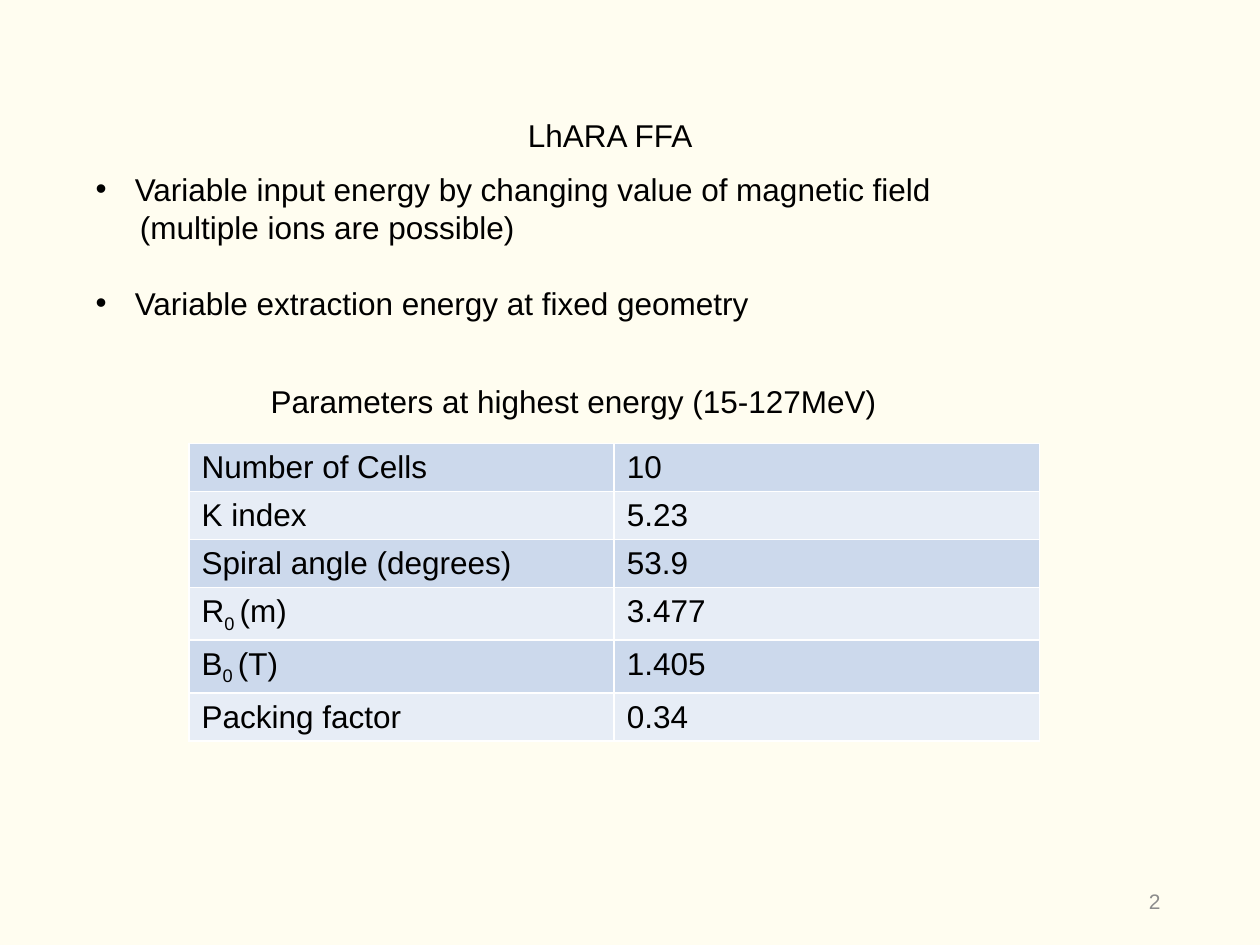
from dataclasses import dataclass

from lxml.etree import SubElement
from pptx import Presentation
from pptx.dml.color import RGBColor
from pptx.enum.text import MSO_ANCHOR, MSO_AUTO_SIZE, PP_ALIGN
from pptx.oxml.ns import qn
from pptx.util import Inches, Pt


@dataclass(frozen=True)
class Theme:
    font: str = "Arial"
    size: Pt = Pt(18)
    small: Pt = Pt(12)
    back: RGBColor = RGBColor(0xFF, 0xFD, 0xF0)
    ink: RGBColor = RGBColor(0, 0, 0)
    gray: RGBColor = RGBColor(0x8C, 0x8C, 0x8C)
    bands: tuple = (RGBColor(0xCC, 0xD9, 0xEC), RGBColor(0xE7, 0xED, 0xF6))
    rule: str = "FFFFFF"


@dataclass(frozen=True)
class Box:
    left: float
    top: float
    width: float
    height: float

    def emu(self) -> tuple:
        return tuple(map(Inches, (self.left, self.top, self.width, self.height)))


@dataclass(frozen=True)
class Item:
    text: str
    indent: float
    bullet: bool = True
    gap: float = 0


@dataclass(frozen=True)
class Row:
    name: str
    value: str
    sub: str = ""
    unit: str = ""


THEME = Theme()
ITEMS = (
    Item("Variable input energy by changing value of magnetic field", 0.31),
    Item("(multiple ions are possible)", 0.35, bullet=False),
    Item("Variable extraction energy at fixed geometry", 0.31, gap=21.7),
)
ROWS = (
    Row("Number of Cells", "10"),
    Row("K index", "5.23"),
    Row("Spiral angle (degrees)", "53.9"),
    Row("R", "3.477", "0 ", "(m)"),
    Row("B", "1.405", "0 ", "(T)"),
    Row("Packing factor", "0.34"),
)


def style(font, **extra) -> None:
    looks = {"name": THEME.font, "size": THEME.size, **extra}
    color = looks.pop("color", THEME.ink)
    for key, value in looks.items():
        setattr(font, key, value)
    font.color.rgb = color


def place(shape, box: Box, anchor=MSO_ANCHOR.TOP):
    """Move a text shape and return its text frame, set to wrap."""
    shape.left, shape.top, shape.width, shape.height = box.emu()
    frame = shape.text_frame
    looks = {"word_wrap": True, "auto_size": MSO_AUTO_SIZE.NONE,
             "vertical_anchor": anchor}
    for key, value in looks.items():
        setattr(frame, key, value)
    return frame


def write(shape, box: Box, text: str, align=PP_ALIGN.LEFT,
          anchor=MSO_ANCHOR.TOP, **looks) -> None:
    para = place(shape, box, anchor).paragraphs[0]
    para.alignment = align
    run = para.add_run()
    run.text = text
    style(run.font, **looks)


def fill_list(shape, box: Box, items: tuple[Item, ...]) -> None:
    frame = place(shape, box)
    for num, item in enumerate(items):
        para = frame.add_paragraph() if num else frame.paragraphs[0]
        para.space_before = Pt(item.gap)
        props = para._p.get_or_add_pPr()
        props.set("marL", str(Inches(item.indent)))
        props.set("indent", str(Inches(-item.indent if item.bullet else 0)))
        if item.bullet:
            SubElement(props, qn("a:buFont"), typeface=THEME.font)
            SubElement(props, qn("a:buChar"), char="•")
        else:
            SubElement(props, qn("a:buNone"))
        run = para.add_run()
        run.text = item.text
        style(run.font)


def fill_cell(cell, parts: tuple, color: RGBColor) -> None:
    """Write the parts, the second one as a subscript, and rule the edges."""
    para = cell.text_frame.paragraphs[0]
    for num, text in enumerate(parts):
        if text:
            run = para.add_run()
            run.text = text
            style(run.font)
            if num == 1:
                run._r.get_or_add_rPr().set("baseline", "-25000")
    props = cell._tc.get_or_add_tcPr()
    for side in ("lnL", "lnR", "lnT", "lnB"):
        line = SubElement(props, qn(f"a:{side}"), w=str(Pt(1)))
        SubElement(SubElement(line, qn("a:solidFill")), qn("a:srgbClr"),
                   val=THEME.rule)
    cell.fill.solid()
    cell.fill.fore_color.rgb = color


def add_grid(slide, box: Box, rows: tuple[Row, ...]) -> None:
    table = slide.shapes.add_table(len(rows), 2, *box.emu()).table
    table.first_row = table.horz_banding = False
    for num, row in enumerate(rows):
        table.rows[num].height = Inches(0.3)
        color = THEME.bands[num % 2]
        fill_cell(table.cell(num, 0), (row.name, row.sub, row.unit), color)
        fill_cell(table.cell(num, 1), (row.value,), color)


def main() -> None:
    deck = Presentation()
    deck.slide_width, deck.slide_height = Inches(10), Inches(7.5)
    slide = deck.slides.add_slide(deck.slide_layouts[1])
    slide.background.fill.solid()
    slide.background.fill.fore_color.rgb = THEME.back

    write(slide.shapes.title, Box(4.09, 0.87, 1.58, 0.4), "LhARA FFA")
    fill_list(slide.placeholders[1], Box(0.66, 1.3, 10, 1.31), ITEMS)
    page = Box(7.06, 6.95, 2.25, 0.4)
    write(slide.shapes.add_textbox(*page.emu()), page, "2", PP_ALIGN.RIGHT,
          MSO_ANCHOR.MIDDLE, size=THEME.small, color=THEME.gray)
    add_grid(slide, Box(1.5, 3.52, 6.75, 1.8), ROWS)
    label = Box(2.05, 2.98, 5.12, 0.4)
    write(slide.shapes.add_textbox(*label.emu()), label,
          "Parameters at highest energy (15-127MeV)")
    deck.save("out.pptx")


if __name__ == "__main__":
    main()
